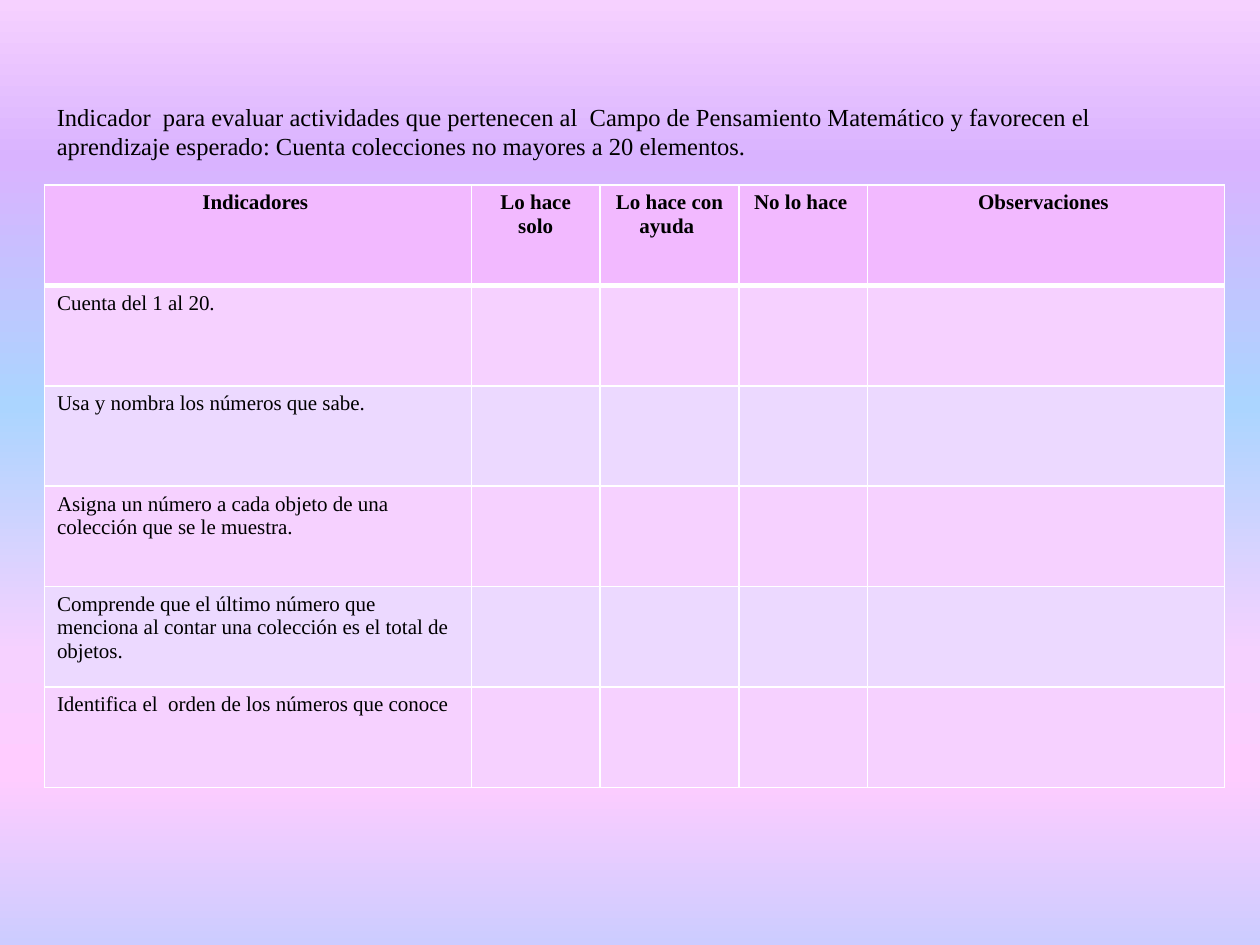
"""Build a slide with a checklist table for assessing counting skills."""
from lxml.etree import SubElement
from pptx import Presentation
from pptx.dml.color import RGBColor
from pptx.enum.text import PP_ALIGN as AL
from pptx.oxml.ns import qn
from pptx.util import Pt

FONT = "Times New Roman"
STOPS = [(0, "F6D1FF"), (17, "D9B3FF"), (43, "ABD5FF"),
         (69, "F6D1FF"), (82, "FFCCFF"), (100, "CCCCFF")]
HEADERS = ["Indicadores ", "Lo hace solo", "Lo hace con ayuda ",
           "No lo hace ", "Observaciones "]
INDICATORS = [
    "Cuenta del 1 al 20.",
    "Usa y nombra los números que sabe.",
    "Asigna un número a cada objeto de una colección que se le muestra.",
    "Comprende que el último número que menciona al contar una colección "
    "es el total de objetos.",
    "Identifica el  orden de los números que conoce",
]
WIDTHS = [244, 73.5, 79.5, 73.5, 204]
ROW_H = 57.4
LEFT = 25.4


def rgb(color):
    return RGBColor.from_string(color)


def add_run(p, text, size, bold=False):
    r = p.add_run()
    r.text = text
    r.font.name = FONT
    r.font.size = Pt(size)
    r.font.bold = bold
    r.font.color.rgb = rgb("000000")


prs = Presentation()
prs.slide_width, prs.slide_height = Pt(720), Pt(540)
s = prs.slides.add_slide(prs.slide_layouts[6])

bg = s.background.fill
bg.gradient()
bg.gradient_angle = 270
stops = s.element.find(".//" + qn("a:gsLst"))
for old in list(stops):
    stops.remove(old)
for pos, color in STOPS:
    gs = SubElement(stops, qn("a:gs"), pos=str(pos * 1000))
    SubElement(gs, qn("a:srgbClr"), val=color)

rows = [HEADERS] + [[text] + [""] * 4 for text in INDICATORS]
tbl = s.shapes.add_table(len(rows), len(WIDTHS), Pt(LEFT), Pt(105.7),
                         Pt(sum(WIDTHS)), Pt(ROW_H * len(rows))).table
for col, width in zip(tbl.columns, WIDTHS):
    col.width = Pt(width)
for i, row in enumerate(rows):
    tbl.rows[i].height = Pt(ROW_H)
    for j, text in enumerate(row):
        cell = tbl.cell(i, j)
        tc_pr = cell._tc.get_or_add_tcPr()
        thick = {0: "lnB", 1: "lnT"}.get(i)
        for side in ("lnL", "lnR", "lnT", "lnB"):
            width = Pt(3 if side == thick else 1)
            ln = SubElement(tc_pr, qn("a:" + side), w=str(int(width)))
            SubElement(SubElement(ln, qn("a:solidFill")),
                       qn("a:srgbClr"), val="FFFFFF")
        cell.fill.solid()
        fill = "F2B9FF" if i == 0 else "F6D1FF" if i % 2 else "ECD9FF"
        cell.fill.fore_color.rgb = rgb(fill)
        if text:
            p = cell.text_frame.paragraphs[0]
            p.alignment = AL.CENTER if i == 0 else AL.LEFT
            add_run(p, text, 12, bold=i == 0)

sp = s.shapes.add_textbox(Pt(LEFT), Pt(54.7), Pt(674.6), Pt(41))
tf = sp.text_frame
tf.word_wrap = True
add_run(tf.paragraphs[0],
        "Indicador  para evaluar actividades que pertenecen al  Campo de "
        "Pensamiento Matemático y favorecen el  aprendizaje esperado: "
        "Cuenta colecciones no mayores a 20 elementos.", 14)

prs.save("out.pptx")
